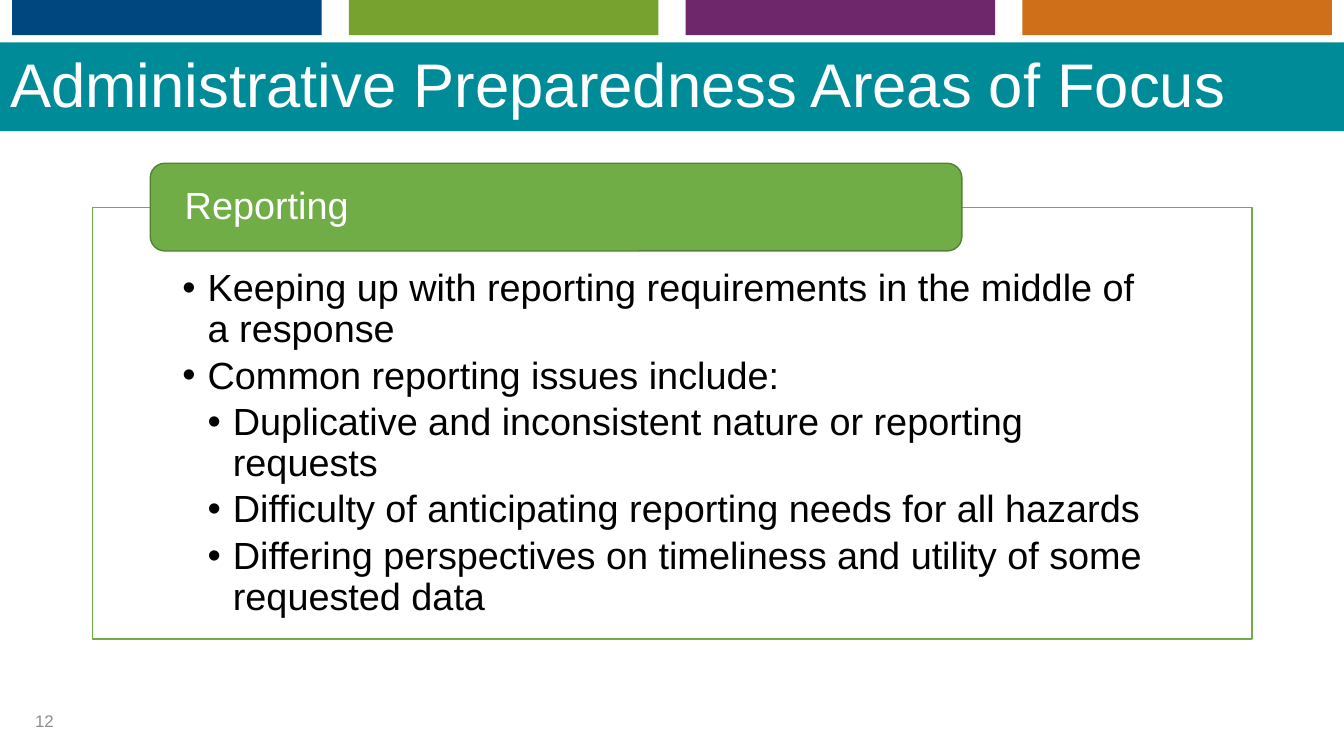
from lxml.etree import SubElement
from pptx import Presentation
from pptx.dml.color import RGBColor
from pptx.enum.shapes import MSO_SHAPE as SHAPE
from pptx.enum.text import MSO_ANCHOR as ANCHOR, MSO_AUTO_SIZE as AUTO, PP_ALIGN as ALIGN
from pptx.oxml.ns import qn
from pptx.util import Inches, Pt

WHITE = RGBColor(0xFF, 0xFF, 0xFF)
BLACK = RGBColor(0, 0, 0)
GREY = RGBColor(0x8C, 0x8C, 0x8C)
TEAL = RGBColor(0x00, 0x8B, 0x99)
GREEN = RGBColor(0x70, 0xAD, 0x47)
DARK_GREEN = RGBColor(0x53, 0x80, 0x35)
TAB_COLOURS = [RGBColor(0x00, 0x46, 0x7F), RGBColor(0x78, 0xA2, 0x2F),
               RGBColor(0x6D, 0x27, 0x6A), RGBColor(0xD0, 0x6F, 0x1A)]
TAB_LEFT, TAB_PITCH = 0.12, 3.34
INDENT = 0.25
ISSUES = [
    (0, "Keeping up with reporting requirements in the middle of a response"),
    (0, "Common reporting issues include:"),
    (1, "Duplicative and inconsistent nature or reporting requests"),
    (1, "Difficulty of anticipating reporting needs for all hazards"),
    (1, "Differing perspectives on timeliness and utility of some requested data"),
]


def add_box(kind, left, top, width, height, fill, line=None):
    sp = s.shapes.add_shape(kind, Inches(left), Inches(top), Inches(width), Inches(height))
    sp.shadow.inherit = False
    sp.fill.solid()
    sp.fill.fore_color.rgb = fill
    if line is None:
        sp.line.fill.background()
    else:
        sp.line.color.rgb = line
        sp.line.width = Pt(1)
    return sp


def style(p, size, colour, spacing=0.9):
    p.alignment = ALIGN.LEFT
    p.line_spacing = spacing
    for r in p.runs:
        r.font.name = "Arial"
        r.font.size = Pt(size)
        r.font.color.rgb = colour


prs = Presentation()
prs.slide_width, prs.slide_height = Inches(13.33), Inches(7.5)
s = prs.slides.add_slide(prs.slide_layouts[5])

band = add_box(SHAPE.RECTANGLE, 0, 0.42, 13.33, 0.88, TEAL)
for i, colour in enumerate(TAB_COLOURS):
    add_box(SHAPE.RECTANGLE, TAB_LEFT + i * TAB_PITCH, 0, 3.07, 0.35, colour)

title = s.shapes.title
band.element.addnext(title.element)
title.left, title.top = Inches(0), Inches(0.48)
title.width, title.height = Inches(13.33), Inches(0.77)
tf = title.text_frame
tf.text = "Administrative Preparedness Areas of Focus"
tf.auto_size = AUTO.NONE
tf.vertical_anchor = ANCHOR.MIDDLE
style(tf.paragraphs[0], 44, WHITE)

panel = add_box(SHAPE.RECTANGLE, 0.92, 2.06, 11.5, 4.28, WHITE, GREEN)
tf = panel.text_frame
tf.word_wrap = True
tf.vertical_anchor = ANCHOR.TOP
tf.margin_left = tf.margin_right = Inches(0.89)
tf.margin_top, tf.margin_bottom = Inches(0.61), Inches(0.21)
tf.text = "\n".join(text for level, text in ISSUES)
for p, (level, text) in zip(tf.paragraphs, ISSUES):
    p.level = level + 1
    pPr = p._p.get_or_add_pPr()
    pPr.set("marL", str(Inches(INDENT * (level + 1))))
    pPr.set("indent", str(-Inches(INDENT)))
    SubElement(pPr, qn("a:buFont")).set("typeface", "Arial")
    SubElement(pPr, qn("a:buChar")).set("char", "•")
    p.space_after = Pt(4)
    style(p, 27, BLACK)

heading = add_box(SHAPE.ROUNDED_RECTANGLE, 1.49, 1.62, 8.05, 0.87, GREEN, DARK_GREEN)
tf = heading.text_frame
tf.text = "Reporting"
tf.vertical_anchor = ANCHOR.MIDDLE
tf.margin_left = tf.margin_right = Inches(0.3)
tf.margin_top = tf.margin_bottom = 0
style(tf.paragraphs[0], 27, WHITE)

number = s.shapes.add_textbox(Inches(0.25), Inches(6.95), Inches(3), Inches(0.4))
tf = number.text_frame
tf.text = "12"
tf.word_wrap = True
tf.vertical_anchor = ANCHOR.MIDDLE
style(tf.paragraphs[0], 12, GREY, 1.0)

prs.save("out.pptx")
